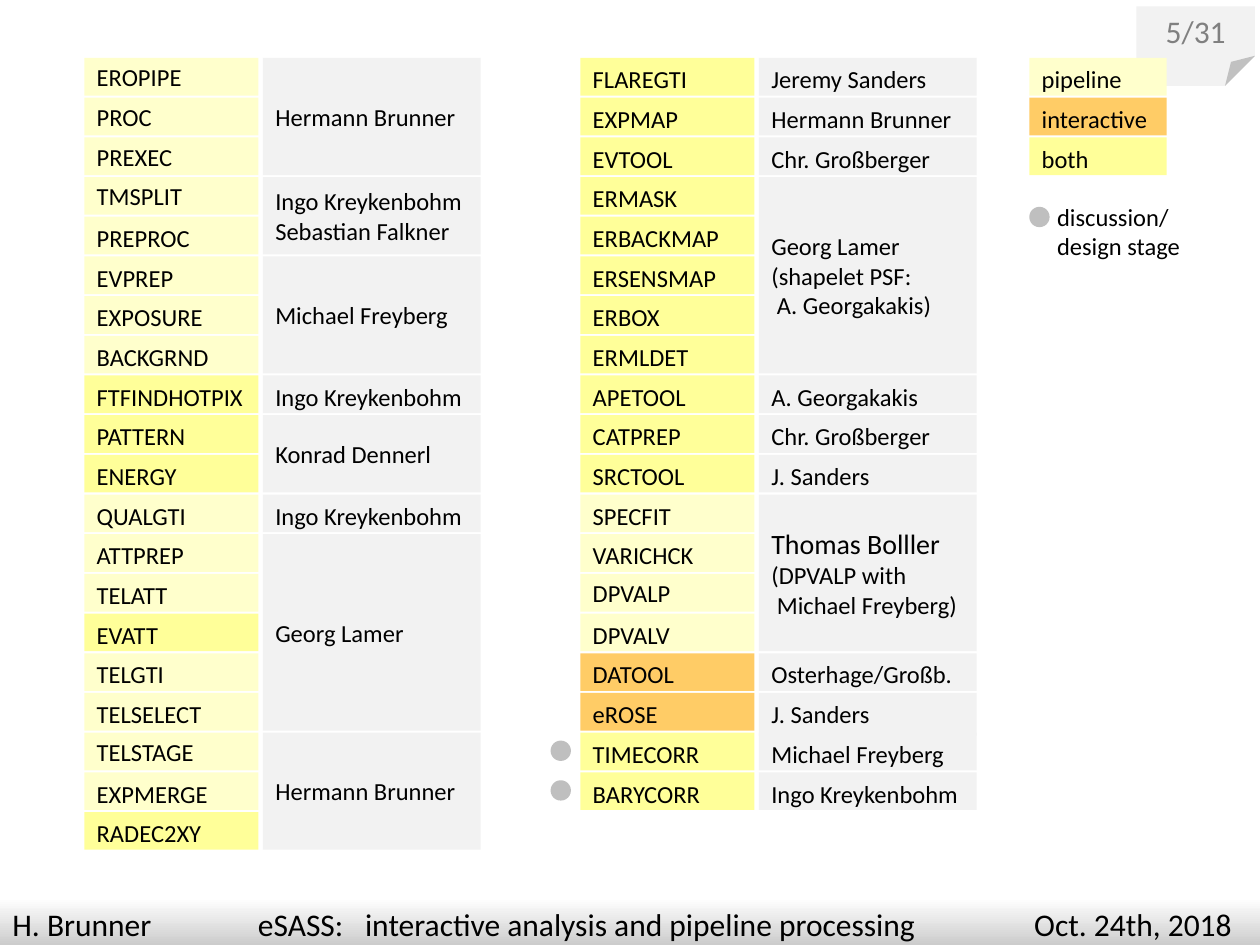
from dataclasses import dataclass

from lxml.etree import SubElement
from pptx import Presentation
from pptx.dml.color import RGBColor
from pptx.enum.shapes import MSO_SHAPE as Shape
from pptx.enum.text import MSO_ANCHOR as Anchor, PP_ALIGN as Align
from pptx.oxml.ns import qn
from pptx.util import Cm, Pt


@dataclass(frozen=True)
class Theme:
    font: str = "Calibri"
    body: int = 14
    lead: int = 16
    large: int = 18
    ink: str = "000000"
    muted: str = "808080"
    panel: str = "F2F2F2"
    dot: str = "BFBFBF"
    bar_top: str = "FFFFFF"
    bar_bottom: str = "CCCCCC"
    pipeline: str = "FFFFCC"
    interactive: str = "FFCC66"
    both: str = "FFFF99"


@dataclass(frozen=True)
class Owner:
    lines: tuple
    rows: int = 1
    lead: int = Theme.body  # size of the first line
    extra: float = 0  # added height, to join the cell below


THEME = Theme()

# Grid, in centimetres
TOP, PITCH, GAP = 1.17, 0.8, 0.04
TOOL_WIDTH, OWNER_WIDTH, OWNER_SHIFT = 3.51, 4.39, 3.6
LEFT_X, RIGHT_X, LEGEND_X = 1.7, 11.7, 20.75
DOT = 0.41

# Runs of tools that share a kind, from top to bottom
LEFT_TOOLS = [
    ("pipeline", "EROPIPE PROC PREXEC TMSPLIT PREPROC EVPREP EXPOSURE BACKGRND"),
    ("both", "FTFINDHOTPIX PATTERN ENERGY"),
    ("pipeline", "QUALGTI ATTPREP TELATT"),
    ("both", "EVATT"),
    ("pipeline", "TELGTI TELSELECT TELSTAGE EXPMERGE"),
    ("both", "RADEC2XY"),
]
RIGHT_TOOLS = [
    ("both", "FLAREGTI EXPMAP EVTOOL ERMASK ERBACKMAP ERSENSMAP ERBOX ERMLDET"),
    ("both", "APETOOL CATPREP SRCTOOL"),
    ("pipeline", "SPECFIT VARICHCK DPVALP DPVALV"),
    ("interactive", "DATOOL eROSE"),
    ("both", "TIMECORR BARYCORR"),
]
LEGEND = [(kind, kind) for kind in ("pipeline", "interactive", "both")]
CENTRED_TOOLS = {"EROPIPE", "PROC", "PREXEC", "TMSPLIT", "TELSTAGE", "DPVALP"}
DESIGN_STAGE_ROWS = (17, 18)

LEFT_OWNERS = [
    Owner(("Hermann Brunner",), 3),
    Owner(("Ingo Kreykenbohm", "Sebastian Falkner"), 2),
    Owner(("Michael Freyberg",), 3),
    Owner(("Ingo Kreykenbohm",)),
    Owner(("Konrad Dennerl",), 2),
    Owner(("Ingo Kreykenbohm",)),
    Owner(("Georg Lamer",), 5),
    Owner(("Hermann Brunner",), 3),
]
RIGHT_OWNERS = [
    Owner(("Jeremy Sanders",)),
    Owner(("Hermann Brunner",)),
    Owner(("Chr. Großberger",)),
    Owner(("Georg Lamer", "(shapelet PSF:", " A. Georgakakis)"), 5),
    Owner(("A. Georgakakis",)),
    Owner(("Chr. Großberger",)),
    Owner(("J. Sanders",)),
    Owner(("Thomas Bolller", "(DPVALP with", " Michael Freyberg)"), 4, THEME.lead),
    Owner(("Osterhage/Großb.",)),
    Owner(("J. Sanders",), extra=0.1),
    Owner(("Michael Freyberg",)),
    Owner(("Ingo Kreykenbohm",)),
]


def row_top(row):
    return TOP + row * PITCH


def write(box, lines, size=THEME.body, lead=None, color=THEME.ink,
          anchor=Anchor.TOP, align=Align.LEFT):
    """Write one paragraph a line; lead is the size of the first one."""
    frame = box.text_frame
    frame.word_wrap = True
    frame.vertical_anchor = anchor
    for index, line in enumerate(lines):
        para = frame.add_paragraph() if index else frame.paragraphs[0]
        para.alignment = align
        span = para.add_run()
        span.text = line
        span.font.name = THEME.font
        span.font.size = Pt(lead if lead and index == 0 else size)
        span.font.color.rgb = RGBColor.from_string(color)


def add_block(slide, kind, left, top, width, height, fill=None):
    box = slide.shapes.add_shape(kind, Cm(left), Cm(top), Cm(width), Cm(height))
    box.shadow.inherit = False
    box.line.fill.background()
    if fill:
        box.fill.solid()
        box.fill.fore_color.rgb = RGBColor.from_string(fill)
    return box


def add_tools(slide, left, groups, width=TOOL_WIDTH):
    tools = [(name, kind) for kind, names in groups for name in names.split()]
    for row, (name, kind) in enumerate(tools):
        box = add_block(slide, Shape.RECTANGLE, left, row_top(row), width,
                        PITCH - GAP, getattr(THEME, kind))
        write(box, [name],
              anchor=Anchor.MIDDLE if name in CENTRED_TOOLS else Anchor.TOP)


def add_owners(slide, left, owners):
    row = 0
    for owner in owners:
        height = owner.rows * PITCH - GAP + owner.extra
        box = add_block(slide, Shape.RECTANGLE, left, row_top(row), OWNER_WIDTH,
                        height, THEME.panel)
        write(box, owner.lines, lead=owner.lead,
              anchor=Anchor.MIDDLE if owner.rows > 1 else Anchor.TOP)
        row += owner.rows


def add_dot(slide, left, top):
    add_block(slide, Shape.FLOWCHART_CONNECTOR, left, top, DOT, DOT, THEME.dot)


def add_page_tag(slide):
    tag = add_block(slide, Shape.FOLDED_CORNER, 22.91, 0.13, 2.39, 1.6, THEME.panel)
    # Size of the fold, which has no public adjustment
    for guides in tag._element.iter(qn("a:avLst")):
        SubElement(guides, qn("a:gd"), name="adj", fmla="val 37700")
    write(tag, ["5/31"], THEME.large, color=THEME.muted,
          anchor=Anchor.MIDDLE, align=Align.CENTER)


def add_legend(slide):
    add_tools(slide, LEGEND_X, LEGEND, width=2.77)
    add_dot(slide, LEGEND_X, 4.17)
    note = slide.shapes.add_textbox(Cm(21.06), Cm(3.94), Cm(3.2), Cm(1.45))
    write(note, ["discussion/", "design stage"])


def add_footer(slide, width):
    bar = add_block(slide, Shape.RECTANGLE, 0, 18.11, width, 0.94)
    bar.fill.gradient()
    bar.fill.gradient_angle = 270
    ends = ((0, THEME.bar_top), (1, THEME.bar_bottom))
    for stop, (position, color) in zip(bar.fill.gradient_stops, ends):
        stop.position = position
        stop.color.rgb = RGBColor.from_string(color)
    write(bar, ["H. Brunner\teSASS:\tinteractive analysis and pipeline processing"
                "\tOct. 24th, 2018"], THEME.large)
    # Tab stops for the talk title and the date
    properties = bar.text_frame.paragraphs[0]._p.get_or_add_pPr()
    tabs = SubElement(properties, qn("a:tabLst"))
    for position in (4.95, 7.11, 20.6):
        SubElement(tabs, qn("a:tab"), pos=str(Cm(position)), algn="l")


def main():
    deck = Presentation()
    deck.slide_width, deck.slide_height = Cm(25.4), Cm(19.05)
    slide = deck.slides.add_slide(deck.slide_layouts[6])

    add_page_tag(slide)

    # Tools and the people responsible
    for left, tools, owners in ((LEFT_X, LEFT_TOOLS, LEFT_OWNERS),
                                (RIGHT_X, RIGHT_TOOLS, RIGHT_OWNERS)):
        add_tools(slide, left, tools)
        add_owners(slide, left + OWNER_SHIFT, owners)

    # Markers for tools still at design stage
    for row in DESIGN_STAGE_ROWS:
        add_dot(slide, 11.1, row_top(row) + 0.16)

    add_legend(slide)
    add_footer(slide, 25.4)
    deck.save("out.pptx")


if __name__ == "__main__":
    main()
